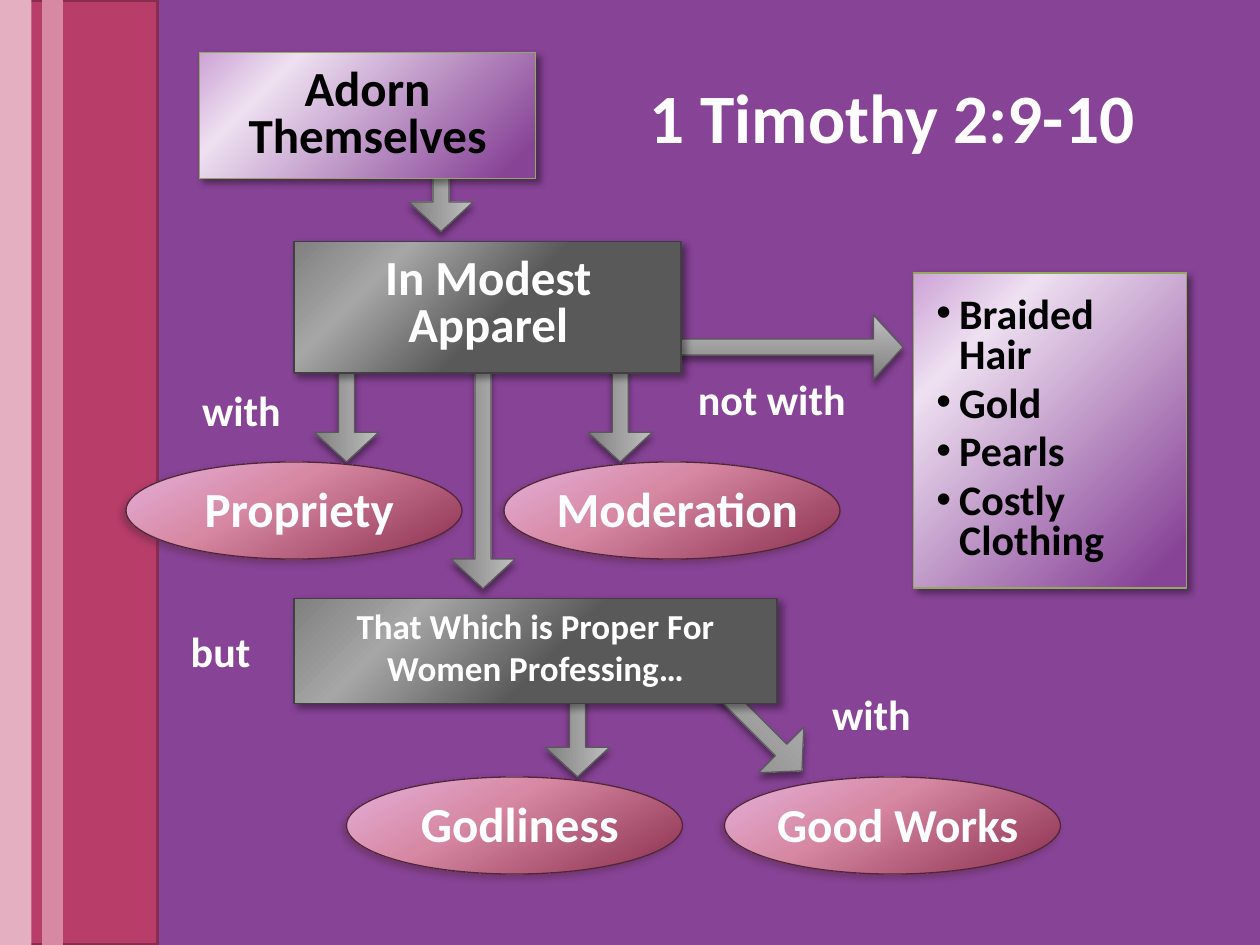
from lxml import etree
from pptx import Presentation
from pptx.dml.color import RGBColor
from pptx.enum.shapes import MSO_SHAPE
from pptx.enum.text import MSO_ANCHOR, PP_ALIGN
from pptx.oxml.ns import qn
from pptx.util import Pt

RECT, OVAL, ARROW = MSO_SHAPE.RECTANGLE, MSO_SHAPE.OVAL, MSO_SHAPE.RIGHT_ARROW
TOP, MIDDLE = MSO_ANCHOR.TOP, MSO_ANCHOR.MIDDLE
LEFT, CENTER = PP_ALIGN.LEFT, PP_ALIGN.CENTER

COLORS = {
    "background": "874396", "band": "B83D68", "band_edge": "882D4D",
    "stripe": "D788A3", "pale_stripe": "E5AFC2", "white": "FFFFFF", "black": "000000",
}
STYLES = {
    "arrow": dict(stops=[(0, "BFBFBF"), (100, "7F7F7F")], angle=90,
                  edge="595959", weight=0.75, shade="000000", shade_angle=90),
    "lilac": dict(stops=[(7, "874396"), (78, "EEE0F1"), (100, "CDA3D6")], angle=225,
                  edge="90AB5E", weight=1, shade="000000", shade_angle=45),
    "gray": dict(stops=[(46, "595959"), (77, "A6A6A6"), (100, "808080")], angle=225,
                 edge="404040", weight=1, shade="000000", shade_angle=45),
    "rose": dict(stops=[(0, "B24D1D"), (2, "E3AFD8"), (40, "D788A3"), (100, "8A2E4E")],
                 angle=61, edge="51253A", weight=0.75, shade="51253A", shade_angle=135),
}

SIDE_STRIPES = [(0, 90, "band"), (24, 12, "stripe"), (0, 18, "pale_stripe")]
ARROW_HEIGHT = 36.7
ARROWS = [
    (291, 386.6, 78, 90), (391.7, 394.6, 78, 45), (210, 252, 132, 90),
    (384, 180, 132, 0), (159, 206.6, 78, 90), (315.4, 206.6, 78, 90), (213, 75, 78, 90),
]
PANELS = [
    ("lilac", (114, 30, 192, 72)),
    ("gray", (168, 138, 221, 75)),
    ("lilac", (522, 156, 156, 180)),
    ("gray", (168, 342, 276, 60)),
]
TEXTS = [
    (["Adorn Themselves"], (114, 30, 192, 72), dict(color="black", spacing=0.8, gap=0.2)),
    (["1 Timothy 2:9-10"], (342, 36, 336, 60), dict(size=39.6)),
    (["In Modest Apparel"], (174, 138, 210, 72), dict(spacing=0.8, gap=0.2)),
    (["Braided Hair", "Gold", "Pearls", "Costly Clothing"], (528, 150, 138, 192),
     dict(size=24, color="black", align=LEFT, spacing=0.8, gap=0.2, bullet="•")),
    (["That Which is Proper For Women Professing…"], (168, 342, 276, 84),
     dict(size=20, anchor=TOP, gap=0.2)),
    (["with"], (84, 216, 108, 36), dict(size=24)),
    (["not with"], (342, 210, 198, 36), dict(size=24)),
    (["but"], (78, 354, 96, 36), dict(size=24)),
    (["with"], (444, 390, 108, 36), dict(size=24)),
]
VIRTUES = [
    ("Propriety", 72, 264, 28), ("Moderation", 288, 264, 28),
    ("Godliness", 198, 444, 28), ("Good Works", 414, 444, 27),
]


def rgb(name):
    return RGBColor.from_string(COLORS[name])


def add_xml(parent, tag, **attributes):
    return etree.SubElement(parent, qn(tag), {k: str(v) for k, v in attributes.items()})


def add_styled(kind, box, stops, angle, edge, weight, shade, shade_angle):
    figure = slide.shapes.add_shape(kind, *map(Pt, box))
    properties = figure.element.spPr
    gradient = add_xml(properties, "a:gradFill", rotWithShape=1)
    stop_list = add_xml(gradient, "a:gsLst")
    for position, color in stops:
        stop = add_xml(stop_list, "a:gs", pos=position * 1000)
        add_xml(stop, "a:srgbClr", val=color)
    add_xml(gradient, "a:lin", ang=angle * 60000, scaled=0)
    figure.line.color.rgb = RGBColor.from_string(edge)
    figure.line.width = Pt(weight)
    figure.shadow.inherit = False
    shadow = add_xml(properties.find(qn("a:effectLst")), "a:outerShdw", blurRad=Pt(4),
                     dist=Pt(3), dir=shade_angle * 60000, rotWithShape=0)
    add_xml(add_xml(shadow, "a:srgbClr", val=shade), "a:alpha", val=40000)
    return figure


def add_text(lines, box, size=28, color="white", align=CENTER, anchor=MIDDLE,
             spacing=1.0, gap=0, bullet=None):
    frame = slide.shapes.add_textbox(*map(Pt, box)).text_frame
    frame.word_wrap = True
    frame.vertical_anchor = anchor
    for index, line in enumerate(lines):
        paragraph = frame.add_paragraph() if index else frame.paragraphs[0]
        paragraph.alignment = align
        paragraph.line_spacing = spacing
        paragraph.space_before = Pt(size * gap)
        if bullet:
            layout = paragraph._p.get_or_add_pPr()
            layout.set("marL", str(Pt(13)))
            layout.set("indent", str(-Pt(13)))
            add_xml(layout, "a:buFont", typeface="Arial")
            add_xml(layout, "a:buChar", char=bullet)
        run = paragraph.add_run()
        run.text = line
        run.font.name = "Calibri"
        run.font.size = Pt(size)
        run.font.bold = True
        run.font.color.rgb = rgb(color)


deck = Presentation()
deck.slide_width, deck.slide_height = Pt(720), Pt(540)
slide = deck.slides.add_slide(deck.slide_layouts[6])
slide.background.fill.solid()
slide.background.fill.fore_color.rgb = rgb("background")

for left, width, color in SIDE_STRIPES:
    stripe = slide.shapes.add_shape(RECT, Pt(left), Pt(0), Pt(width), Pt(540))
    stripe.shadow.inherit = False
    stripe.fill.solid()
    stripe.fill.fore_color.rgb = rgb(color)
    if color == "band":
        stripe.line.color.rgb = rgb("band_edge")
        stripe.line.width = Pt(2)
    else:
        stripe.line.fill.background()

for left, top, length, turn in ARROWS:
    arrow = add_styled(ARROW, (left, top, length, ARROW_HEIGHT), **STYLES["arrow"])
    arrow.rotation = turn
    arrow.adjustments[0], arrow.adjustments[1] = 0.25, 0.46

for style, box in PANELS:
    add_styled(RECT, box, **STYLES[style])

for virtue, left, top, size in VIRTUES:
    add_styled(OVAL, (left, top, 192, 55.5), **STYLES["rose"])
    add_text([virtue], (left, top + 6, 198, 41), size=size)

for lines, box, style in TEXTS:
    add_text(lines, box, **style)

deck.save("out.pptx")
